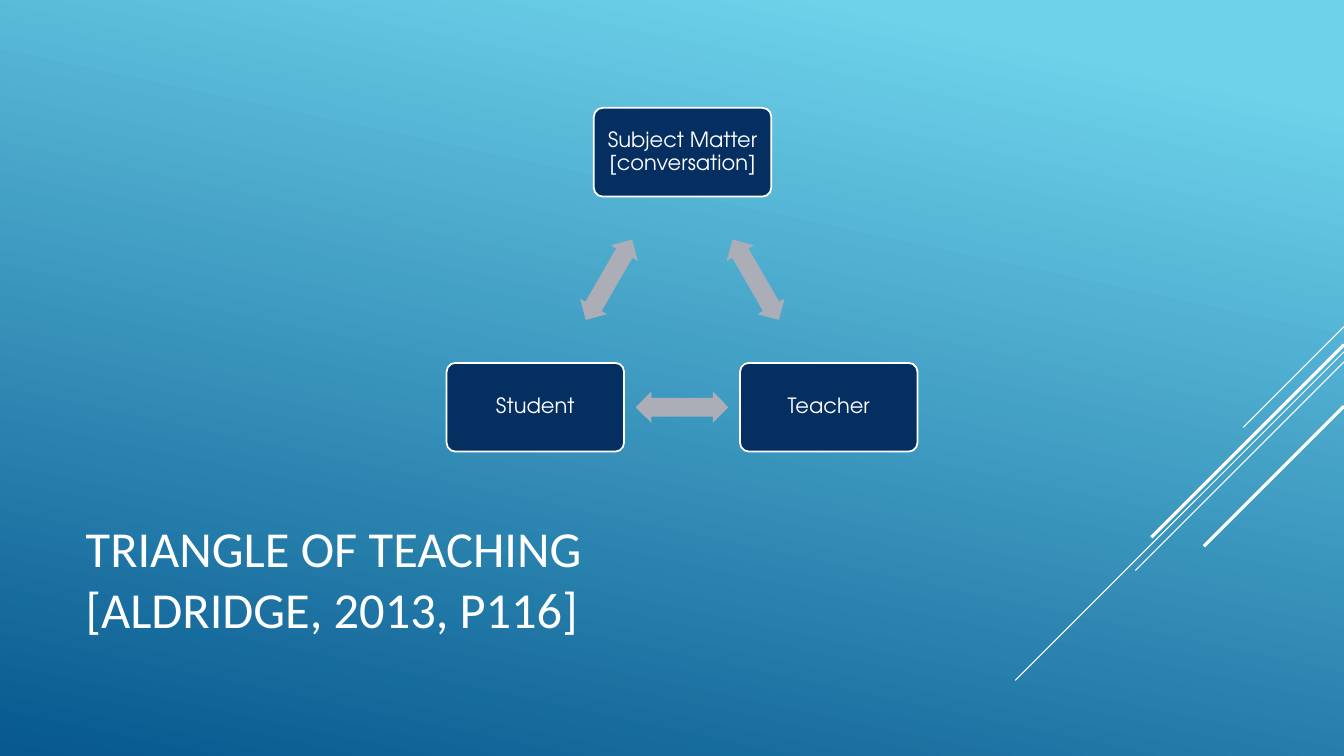
from dataclasses import dataclass

from pptx import Presentation
from pptx.dml.color import RGBColor
from pptx.enum.shapes import MSO_CONNECTOR, MSO_SHAPE
from pptx.enum.text import MSO_ANCHOR, MSO_AUTO_SIZE, PP_ALIGN
from pptx.oxml.ns import qn
from pptx.util import Inches, Pt


@dataclass(frozen=True)
class Theme:
    sky: RGBColor = RGBColor.from_string("6ED2EB")
    sea: RGBColor = RGBColor.from_string("06588E")
    navy: RGBColor = RGBColor.from_string("052F61")
    grey: RGBColor = RGBColor.from_string("ABADB7")
    white: RGBColor = RGBColor.from_string("FFFFFF")
    title_font: str = "Calibri"
    box_font: str = "TeX Gyre Adventor"
    title_size: int = 36
    box_size: int = 15


THEME = Theme()
SLIDE_W, SLIDE_H = 13.33, 7.5
BOX_W, BOX_H = 1.76, 0.88
ARROW_W, ARROW_H = 0.92, 0.31

# Box centres, clockwise from the top
CORNERS = [
    ("Subject Matter [conversation]", 6.77, 1.51),
    ("Teacher", 8.22, 4.04),
    ("Student", 5.31, 4.04),
]
# Diagonal rays from the right edge: start height, run, line width
RAYS = [
    (3.24, 1.00, 0.75),
    (3.49, 3.26, 0.75),
    (3.59, 2.07, 0.75),
    (3.42, 1.91, 2.25),
    (4.03, 1.39, 2.25),
]


def set_background(s):
    fill = s.background.fill
    fill.gradient()
    fill.gradient_angle = 258
    stops = ((0.1, THEME.sky), (1.0, THEME.sea))
    for stop, (position, color) in zip(fill.gradient_stops, stops):
        stop.position = position
        stop.color.rgb = color


def format_runs(p, font, size):
    for r in p.runs:
        r.font.name = font
        r.font.size = Pt(size)
        r.font.color.rgb = THEME.white


def set_title(s, text):
    sp = s.shapes.title
    sp.left, sp.top = Inches(0.75), Inches(4.91)
    sp.width, sp.height = Inches(9.33), Inches(1.65)
    tf = sp.text_frame
    tf.text = text
    tf.auto_size = MSO_AUTO_SIZE.NONE
    tf.vertical_anchor = MSO_ANCHOR.MIDDLE
    p = tf.paragraphs[0]
    p.alignment = PP_ALIGN.LEFT
    format_runs(p, THEME.title_font, THEME.title_size)


def add_ray(s, y, run, width):
    line = s.shapes.add_connector(
        MSO_CONNECTOR.STRAIGHT,
        Inches(SLIDE_W), Inches(y), Inches(SLIDE_W - run), Inches(y + run))
    line.line.color.rgb = THEME.white
    line.line.width = Pt(width)
    sp_pr = line._element.spPr
    sp_pr.append(sp_pr.makeelement(qn("a:effectLst"), {}))


def add_centred_shape(s, kind, x, y, w, h, color):
    sp = s.shapes.add_shape(
        kind, Inches(x - w / 2), Inches(y - h / 2), Inches(w), Inches(h))
    sp.shadow.inherit = False
    sp.fill.solid()
    sp.fill.fore_color.rgb = color
    return sp


def add_box(s, text, x, y):
    sp = add_centred_shape(
        s, MSO_SHAPE.ROUNDED_RECTANGLE, x, y, BOX_W, BOX_H, THEME.navy)
    sp.adjustments[0] = 0.1
    sp.line.color.rgb = THEME.white
    sp.line.width = Pt(1.25)
    tf = sp.text_frame
    tf.text = text
    tf.word_wrap = True
    tf.vertical_anchor = MSO_ANCHOR.MIDDLE
    tf.margin_left = tf.margin_right = Inches(0.06)
    tf.margin_top = tf.margin_bottom = Inches(0.06)
    p = tf.paragraphs[0]
    p.alignment = PP_ALIGN.CENTER
    p.line_spacing = 0.9
    format_runs(p, THEME.box_font, THEME.box_size)


def add_arrow(s, x, y, rotation):
    sp = add_centred_shape(
        s, MSO_SHAPE.LEFT_RIGHT_ARROW, x, y, ARROW_W, ARROW_H, THEME.grey)
    sp.adjustments[0], sp.adjustments[1] = 0.6, 0.5
    sp.line.fill.background()
    sp.rotation = rotation


def main():
    prs = Presentation()
    prs.slide_width, prs.slide_height = Inches(SLIDE_W), Inches(SLIDE_H)
    s = prs.slides.add_slide(prs.slide_layouts[5])

    # Backdrop and title
    set_background(s)
    for y, run, width in RAYS:
        add_ray(s, y, run, width)
    set_title(s, "TRIANGLE OF TEACHING\v[ALDRIDGE, 2013, P116]")

    # Triangle: a box at each corner, an arrow midway along each side
    for i, (text, x, y) in enumerate(CORNERS):
        _, next_x, next_y = CORNERS[(i + 1) % len(CORNERS)]
        add_box(s, text, x, y)
        add_arrow(s, (x + next_x) / 2, (y + next_y) / 2, 60 + 120 * i)

    prs.save("out.pptx")


if __name__ == "__main__":
    main()
